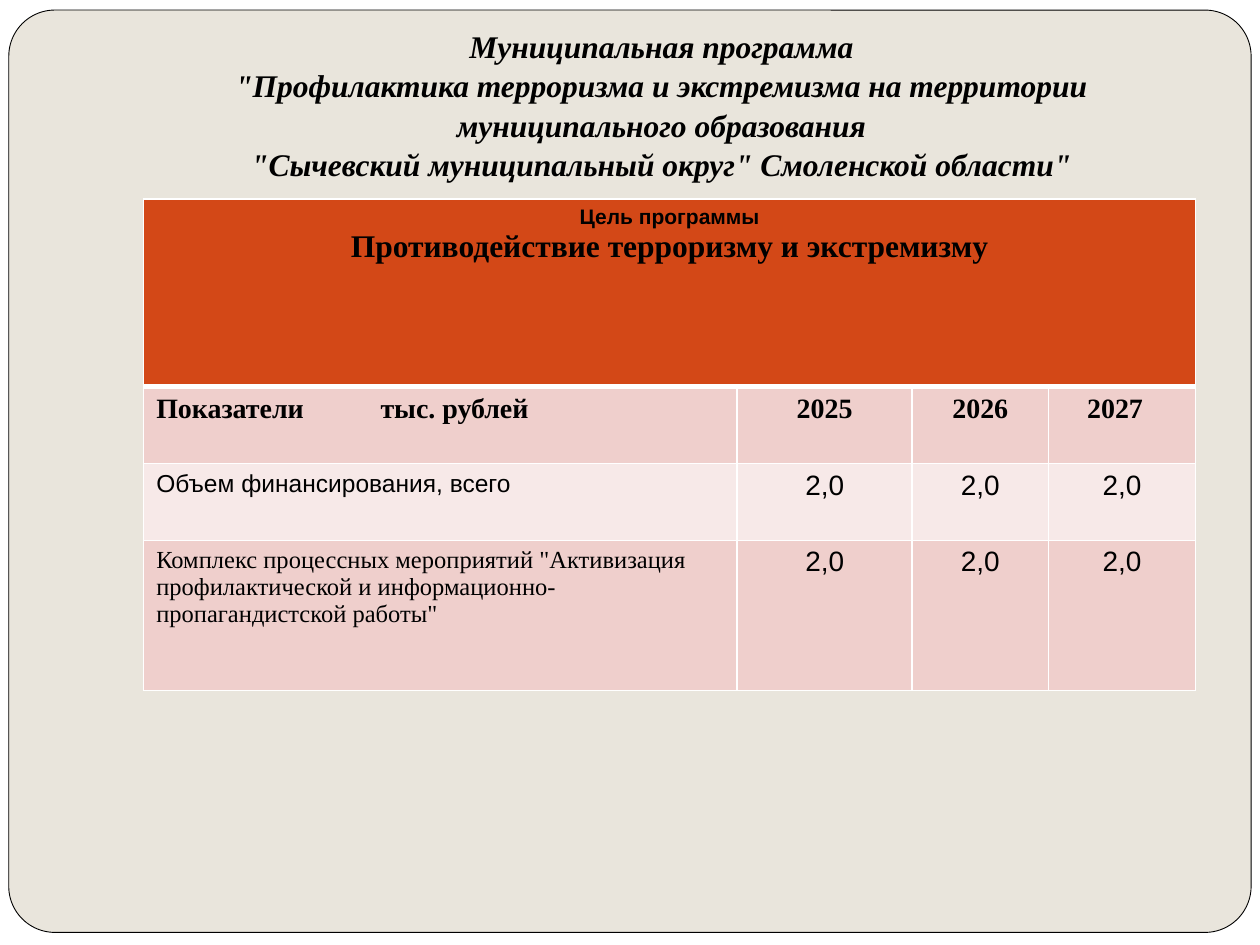
from lxml import etree
from pptx import Presentation
from pptx.dml.color import RGBColor
from pptx.enum import shapes, text
from pptx.oxml import ns
from pptx.util import Inches, Pt

SERIF, SANS = "Times New Roman", "Arial"
ORANGE, PINK, PALE_PINK = "D34817", "EFCFCC", "F7E9E8"
WHITE, BLACK, BEIGE = "FFFFFF", "000000", "E9E5DC"
CENTER, LEFT = text.PP_ALIGN.CENTER, text.PP_ALIGN.LEFT

COLUMN_WIDTHS = [4.71, 1.39, 1.08, 1.17]
ROW_HEIGHTS = [1.49, 0.61, 0.61, 1.19]
YEARS = ["2025", "2026", "2027"]
FUNDING = [
    ("Объем финансирования, всего", SANS, PALE_PINK, ["2,0", "2,0", "2,0"]),
    ('Комплекс процессных мероприятий "Активизация профилактической '
     'и информационно-пропагандистской работы"', SERIF, PINK, ["2,0", "2,0", "2,0"]),
]


def color(value):
    return RGBColor.from_string(value)


def style(para, size, font, bold=False, italic=False, align=CENTER):
    para.alignment = align
    para.font.size, para.font.name = Pt(size), font
    para.font.bold, para.font.italic = bold, italic
    para.font.color.rgb = color(BLACK)


def add_panel(page):
    panel = page.shapes.add_shape(shapes.MSO_SHAPE.ROUNDED_RECTANGLE, Inches(0.07),
                                  Inches(0.08), Inches(9.86), Inches(7.32))
    panel.adjustments[0] = 0.05
    panel.shadow.inherit = False
    panel.fill.solid()
    panel.fill.fore_color.rgb = color(BEIGE)
    panel.line.color.rgb = color(BLACK)
    panel.line.width = Pt(0.5)
    page.shapes.title.element.addprevious(panel.element)


def set_title(page):
    title = page.shapes.title
    title.left, title.top = Inches(1), Inches(0.3)
    title.width, title.height = Inches(8.5), Inches(1.25)
    frame = title.text_frame
    frame.word_wrap = True
    frame.auto_size = text.MSO_AUTO_SIZE.NONE
    frame.vertical_anchor = text.MSO_ANCHOR.BOTTOM
    frame.margin_bottom = Inches(0.1)
    para = frame.paragraphs[0]
    para.text = ('Муниципальная программа\v"Профилактика терроризма и экстремизма '
                 'на территории муниципального образования\v'
                 '"Сычевский муниципальный округ" Смоленской области"')
    para.line_spacing = 1.04
    style(para, 18, SERIF, bold=True, italic=True)


def set_borders(cell, top, bottom):
    """Draw white borders; side borders are always one point wide."""
    properties = cell._tc.get_or_add_tcPr()
    widths = {"a:lnL": 1, "a:lnR": 1, "a:lnT": top, "a:lnB": bottom}
    for position, (tag, width) in enumerate(widths.items()):
        line = etree.Element(ns.qn(tag), w=str(Pt(width)))
        fill = etree.SubElement(line, ns.qn("a:solidFill"))
        etree.SubElement(fill, ns.qn("a:srgbClr"), val=WHITE)
        properties.insert(position, line)


def fill_cell(cell, content, fill, size, font, bold=False, align=CENTER):
    cell.fill.solid()
    cell.fill.fore_color.rgb = color(fill)
    para = cell.text_frame.paragraphs[0]
    para.text = content
    style(para, size, font, bold, align=align)


def add_tab_stop(para, position):
    properties = para._p.get_or_add_pPr()
    stops = etree.Element(ns.qn("a:tabLst"))
    etree.SubElement(stops, ns.qn("a:tab"), pos=str(Inches(position)), algn="l")
    properties.insert(0, stops)


def add_program_table(page):
    frame = page.shapes.add_table(len(ROW_HEIGHTS), len(COLUMN_WIDTHS), Inches(1.14),
                                  Inches(1.58), Inches(8.36), Inches(3.9))
    table = frame.table
    table.first_row = table.horz_banding = False
    for column, width in zip(table.columns, COLUMN_WIDTHS):
        column.width = Inches(width)
    for row, height in zip(table.rows, ROW_HEIGHTS):
        row.height = Inches(height)

    goal = table.cell(0, 0)
    goal.merge(table.cell(0, len(COLUMN_WIDTHS) - 1))
    fill_cell(goal, "Цель программы", ORANGE, 12, SANS, bold=True)
    para = goal.text_frame.add_paragraph()
    para.text = "Противодействие терроризму и экстремизму"
    style(para, 18, SERIF, bold=True)

    heading = table.cell(1, 0)
    fill_cell(heading, "Показатели\tтыс. рублей", PINK, 16, SERIF, True, LEFT)
    add_tab_stop(heading.text_frame.paragraphs[0], 1.78)
    for column, year in enumerate(YEARS, 1):
        fill_cell(table.cell(1, column), year, PINK, 16, SERIF, bold=True)
    table.cell(1, 3).margin_right = Inches(0.21)

    for row, (label, font, fill, amounts) in enumerate(FUNDING, 2):
        fill_cell(table.cell(row, 0), label, fill, 14, font, align=LEFT)
        for column, amount in enumerate(amounts, 1):
            fill_cell(table.cell(row, column), amount, fill, 16, SANS)

    for index, row in enumerate(table.rows):
        for cell in row.cells:
            set_borders(cell, top=3 if index == 1 else 1, bottom=3 if index == 0 else 1)


def main():
    deck = Presentation()
    deck.slide_width, deck.slide_height = Inches(10), Inches(7.5)
    page = deck.slides.add_slide(deck.slide_layouts[5])
    page.background.fill.solid()
    page.background.fill.fore_color.rgb = color(WHITE)
    add_panel(page)
    set_title(page)
    add_program_table(page)
    deck.save("out.pptx")


if __name__ == "__main__":
    main()
